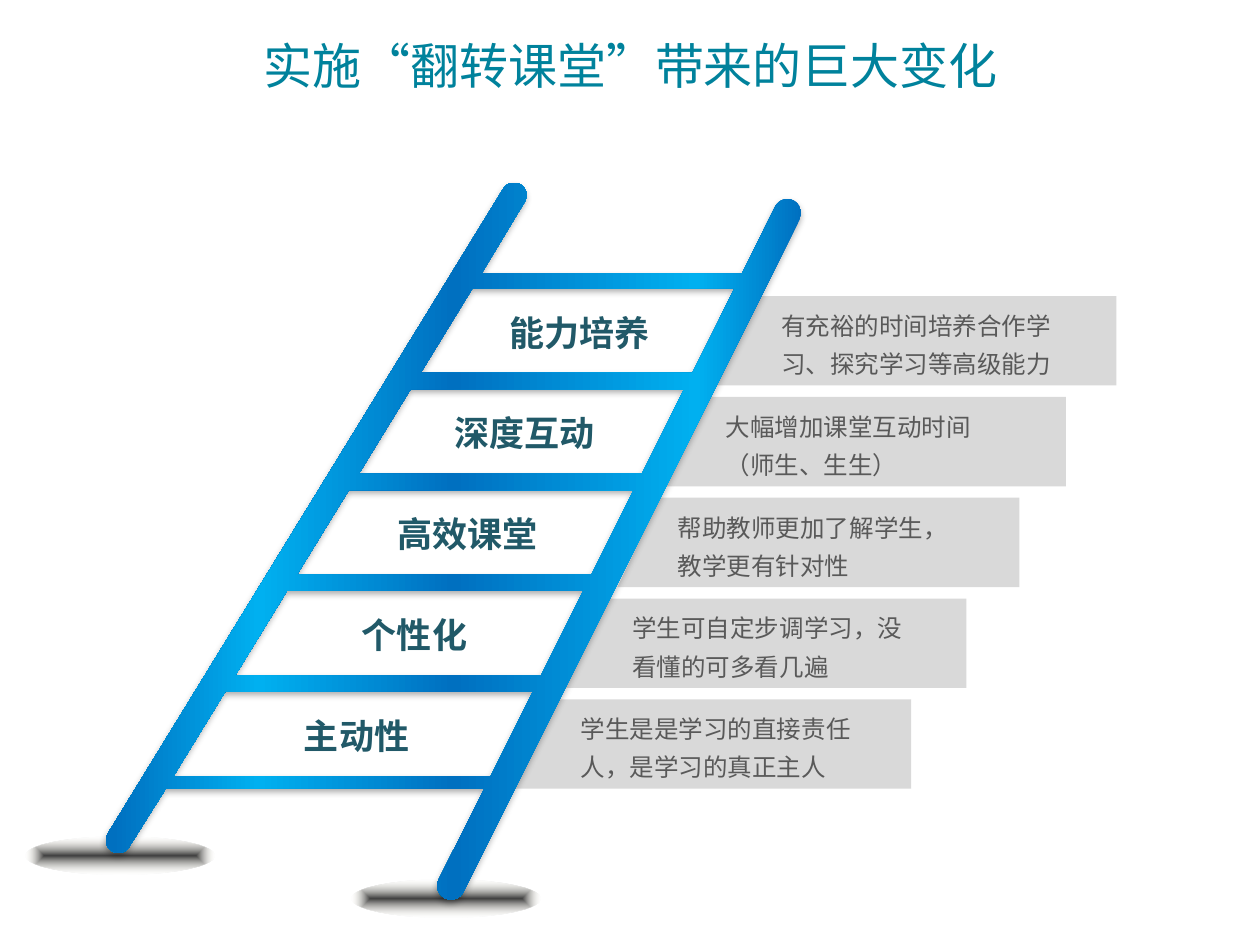
from dataclasses import dataclass
from math import atan2, cos, pi, sin

from lxml.etree import SubElement
from pptx import Presentation
from pptx.dml.color import RGBColor
from pptx.enum.shapes import MSO_SHAPE
from pptx.enum.text import MSO_ANCHOR, MSO_AUTO_SIZE, PP_ALIGN
from pptx.oxml import parse_xml
from pptx.oxml.ns import nsdecls, qn
from pptx.util import Inches, Pt

TEAL = RGBColor(0x00, 0x82, 0x9C)
DARK_TEAL = RGBColor(0x21, 0x59, 0x68)
TEXT_GREY = RGBColor(0x59, 0x59, 0x59)
BAND_GREY = RGBColor(0xD9, 0xD9, 0xD9)
DEEP_BLUE = RGBColor(0x00, 0x70, 0xC0)
BRIGHT_BLUE = RGBColor(0x00, 0xB0, 0xF0)
SHADE = RGBColor(0x40, 0x40, 0x40)
CREAM = RGBColor(0xEE, 0xEC, 0xE1)
CJK_FONT = "Noto Sans CJK SC"

TITLE_FORMAT = {"name": "Montserrat", "size": Pt(28)}
LABEL_FORMAT = {"name": CJK_FONT, "size": Pt(20), "bold": True}
DETAIL_FORMAT = {"name": CJK_FONT, "size": Pt(14)}

Point = tuple[float, float]


@dataclass
class Step:
    label: str
    label_left: float
    detail: str
    detail_left: float
    detail_width: float
    band_left: float


@dataclass
class Rail:
    top: Point
    foot: Point
    radius: float

    def cap(self, at_top: bool) -> list[Point]:
        """Half circle round one end, clockwise."""
        end, other = (self.top, self.foot) if at_top else (self.foot, self.top)
        heading = atan2(end[1] - other[1], end[0] - other[0])
        angles = [heading + pi * (i / 16 - 0.5) for i in range(17)]
        return [(end[0] + self.radius * cos(a), end[1] + self.radius * sin(a))
                for a in angles]


STEPS = [
    Step("能力培养", 3.79, "有充裕的时间培养合作学习、探究学习等高级能力", 6.1, 2.52, 5.67),
    Step("深度互动", 3.35, "大幅增加课堂互动时间（师生、生生）", 5.66, 2.41, 5.27),
    Step("高效课堂", 2.9, "帮助教师更加了解学生，教学更有针对性", 5.28, 2.52, 4.9),
    Step("个性化", 2.48, "学生可自定步调学习，没看懂的可多看几遍", 4.92, 2.44, 4.48),
    Step("主动性", 2.02, "学生是是学习的直接责任人，是学习的真正主人", 4.51, 2.53, 4.04),
]
STEP_PITCH = 0.8
LEFT_RAIL = Rail((4.08, 1.55), (0.94, 6.67), 0.1)
RIGHT_RAIL = Rail((6.25, 1.69), (3.58, 7.03), 0.11)
OPENING_TOP, OPENING_HEIGHT = 2.29, 0.67
RUNG_TOP, RUNG_FOOT = 2.17, 6.26


def left_inner(y: float) -> Point:
    return 3.75 - 0.613 * (y - OPENING_TOP), y


def right_inner(y: float) -> Point:
    return 5.83 - 0.5 * (y - OPENING_TOP), y


def add_outline(shapes, contours: list[list[Point]]):
    scaled = [[(Inches(x), Inches(y)) for x, y in c] for c in contours]
    builder = shapes.build_freeform(*scaled[0][0])
    builder.add_line_segments(scaled[0][1:], close=True)
    for contour in scaled[1:]:
        builder.move_to(*contour[0])
        builder.add_line_segments(contour[1:], close=True)
    shape = builder.convert_to_shape()
    shape.line.fill.background()
    shape.shadow.inherit = False
    return shape


def set_gradient(shape, stops: list[tuple[int, RGBColor, int]], direction: str) -> None:
    """Stops are (position %, colour, opacity %)."""
    marks = "".join(
        f'<a:gs pos="{pos * 1000}"><a:srgbClr val="{colour}">'
        f'<a:alpha val="{opacity * 1000}"/></a:srgbClr></a:gs>'
        for pos, colour, opacity in stops)
    shape.fill.background()
    properties = shape._element.spPr
    properties.replace(properties.find(qn("a:noFill")), parse_xml(
        f'<a:gradFill {nsdecls("a")} rotWithShape="1">'
        f"<a:gsLst>{marks}</a:gsLst>{direction}</a:gradFill>"))


def format_run(run, formats: dict, colour: RGBColor) -> None:
    for attribute, value in formats.items():
        setattr(run.font, attribute, value)
    run.font.color.rgb = colour
    SubElement(run._r.get_or_add_rPr(), qn("a:ea"), typeface=CJK_FONT)


def add_text(shapes, text: str, left: float, top: float, width: float, height: float,
             formats: dict, colour: RGBColor, layout: dict) -> None:
    frame = shapes.add_textbox(*map(Inches, (left, top, width, height))).text_frame
    frame.word_wrap = True
    frame.auto_size = MSO_AUTO_SIZE.SHAPE_TO_FIT_TEXT
    paragraph = frame.paragraphs[0]
    for attribute, value in layout.items():
        setattr(paragraph, attribute, value)
    run = paragraph.add_run()
    run.text = text
    format_run(run, formats, colour)


def add_band(shapes, left: float, top: float) -> None:
    right, bottom = left + 3.19, top + 0.71
    band = add_outline(shapes, [[(left + 0.34, top), (right, top),
                                 (right, bottom), (left, bottom)]])
    band.fill.solid()
    band.fill.fore_color.rgb = BAND_GREY


def add_ground_shadow(shapes, left: float, top: float) -> None:
    spot = shapes.add_shape(MSO_SHAPE.OVAL, *map(Inches, (left, top, 1.5, 0.3)))
    spot.line.fill.background()
    spot.shadow.inherit = False
    set_gradient(spot, [(0, SHADE, 100), (100, CREAM, 0)],
                 '<a:path path="shape"><a:fillToRect l="50000" t="50000" '
                 'r="50000" b="50000"/></a:path>')


def add_ladder(shapes) -> None:
    frame = [*LEFT_RAIL.cap(True), left_inner(RUNG_TOP), right_inner(RUNG_TOP),
             *RIGHT_RAIL.cap(True), *RIGHT_RAIL.cap(False),
             right_inner(RUNG_FOOT), left_inner(RUNG_FOOT), *LEFT_RAIL.cap(False)]
    openings = []
    for i in range(len(STEPS)):
        top = OPENING_TOP + i * STEP_PITCH
        bottom = top + OPENING_HEIGHT
        openings.append([left_inner(top), left_inner(bottom),
                         right_inner(bottom), right_inner(top)])
    ladder = add_outline(shapes, [frame, *openings])
    set_gradient(ladder, [(0, DEEP_BLUE, 100), (15, BRIGHT_BLUE, 100),
                          (50, DEEP_BLUE, 100), (78, BRIGHT_BLUE, 100),
                          (99, DEEP_BLUE, 100)], '<a:lin ang="10800000" scaled="0"/>')
    ladder._element.spPr.find(qn("a:effectLst")).append(parse_xml(
        f'<a:outerShdw {nsdecls("a")} blurRad="{Pt(3.5)}" dist="{Pt(2.2)}" '
        'dir="5400000" rotWithShape="0"><a:srgbClr val="000000">'
        '<a:alpha val="32000"/></a:srgbClr></a:outerShdw>'))


def main() -> None:
    deck = Presentation()
    deck.slide_width, deck.slide_height = Inches(10), Inches(7.5)
    slide = deck.slides.add_slide(deck.slide_layouts[5])
    shapes = slide.shapes

    # Title
    title = shapes.title
    title.left, title.top, title.width, title.height = map(Inches, (0.28, 0.21, 9.45, 0.61))
    title.text_frame.text = "实施“翻转课堂”带来的巨大变化"
    title.text_frame.auto_size = MSO_AUTO_SIZE.NONE
    title.text_frame.vertical_anchor = MSO_ANCHOR.MIDDLE
    heading = title.text_frame.paragraphs[0]
    heading.alignment = PP_ALIGN.CENTER
    format_run(heading.runs[0], TITLE_FORMAT, TEAL)

    # Grey bands, lowest at the back
    for i, step in reversed(list(enumerate(STEPS))):
        add_band(shapes, step.band_left, 2.35 + i * STEP_PITCH)

    # Ladder on its ground shadows
    add_ground_shadow(shapes, 0.2, 6.64)
    add_ground_shadow(shapes, 2.79, 6.98)
    add_ladder(shapes)

    # Labels between the rungs, details on the bands
    for i, step in enumerate(STEPS):
        add_text(shapes, step.label, step.label_left, 2.42 + i * STEP_PITCH, 1.62, 0.44,
                 LABEL_FORMAT, DARK_TEAL, {"alignment": PP_ALIGN.CENTER})
    for i, step in enumerate(STEPS):
        add_text(shapes, step.detail, step.detail_left, 2.35 + i * STEP_PITCH,
                 step.detail_width, 0.7, DETAIL_FORMAT, TEXT_GREY, {"line_spacing": 1.3})

    deck.save("out.pptx")


if __name__ == "__main__":
    main()
